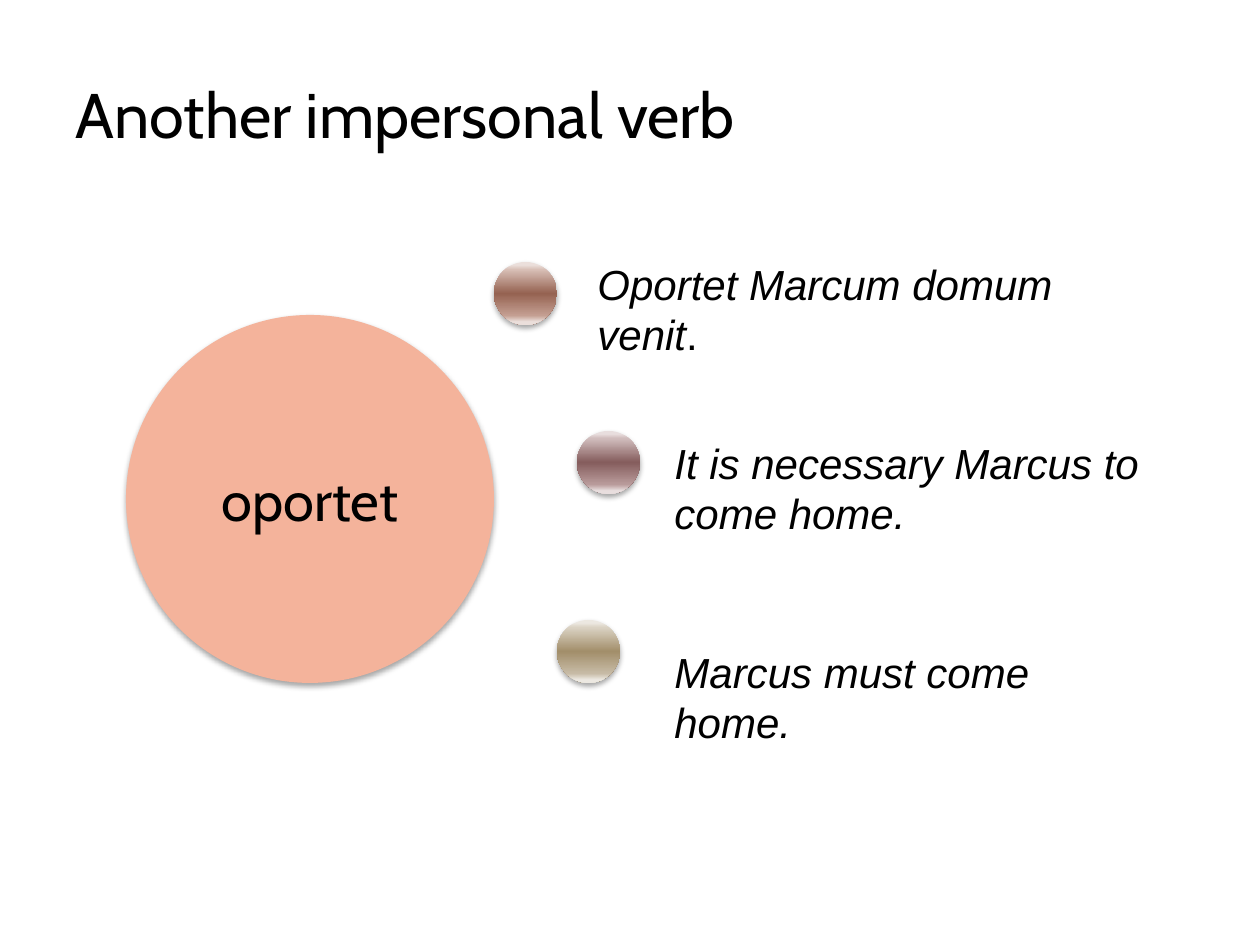
import lxml.etree
import pptx
import pptx.dml.color
import pptx.enum.shapes
import pptx.enum.text
import pptx.oxml.ns
import pptx.util

RGBColor = pptx.dml.color.RGBColor
BLACK = RGBColor(0x00, 0x00, 0x00)
PEACH = RGBColor(0xF4, 0xB3, 0x9B)

# Bead shades: edge, upper band, middle, lower band
RUST = (RGBColor(0xEB, 0xDF, 0xDB), RGBColor(0xD8, 0xBF, 0xB6),
        RGBColor(0x95, 0x62, 0x51), RGBColor(0xC4, 0x9F, 0x92))
MAUVE = (RGBColor(0xE8, 0xDE, 0xDE), RGBColor(0xD0, 0xBC, 0xBC),
         RGBColor(0x85, 0x5D, 0x5D), RGBColor(0xB9, 0x9B, 0x9B))
SAND = (RGBColor(0xEC, 0xE8, 0xE1), RGBColor(0xDA, 0xD2, 0xC3),
        RGBColor(0xA2, 0x8E, 0x6A), RGBColor(0xC7, 0xBB, 0xA6))

PX_PER_INCH = 126
BEAD_SIZE = 63
STOP_PERCENTS = (5, 12, 50, 85, 95)


def add_xml(parent, tag, **attributes):
    return lxml.etree.SubElement(parent, pptx.oxml.ns.qn(tag), attributes)


class SlideBuilder:
    heading_font = "Cabin"
    body_font = "Arial"

    def __init__(self, slide):
        self.slide = slide

    def emu(self, *lengths):
        return [pptx.util.Emu(round(n * 914400 / PX_PER_INCH)) for n in lengths]

    def style(self, para, name, size, italic=None):
        para.font.name = name
        para.font.size = pptx.util.Pt(size)
        para.font.color.rgb = BLACK
        para.font.italic = italic

    def title(self, text, *bounds):
        title = self.slide.shapes.title
        title.left, title.top, title.width, title.height = self.emu(*bounds)
        frame = title.text_frame
        frame.text = text
        frame.auto_size = pptx.enum.text.MSO_AUTO_SIZE.NONE
        frame.vertical_anchor = pptx.enum.text.MSO_ANCHOR.BOTTOM
        para = frame.paragraphs[0]
        para.alignment = pptx.enum.text.PP_ALIGN.LEFT
        self.style(para, self.heading_font, 36)

    def circle(self, left, top, size):
        circle = self.slide.shapes.add_shape(
            pptx.enum.shapes.MSO_SHAPE.OVAL, *self.emu(left, top, size, size))
        circle.line.fill.background()
        # Soft shadow straight below
        circle.shadow.inherit = False
        effects = circle.element.spPr.find(pptx.oxml.ns.qn("a:effectLst"))
        shadow = add_xml(effects, "a:outerShdw", blurRad="39370", dist="22860",
                         dir="5400000", rotWithShape="0")
        color = add_xml(shadow, "a:srgbClr", val=str(BLACK))
        add_xml(color, "a:alpha", val="35000")
        return circle

    def labelled_circle(self, text, left, top, size, color):
        circle = self.circle(left, top, size)
        circle.fill.solid()
        circle.fill.fore_color.rgb = color
        frame = circle.text_frame
        frame.text = text
        frame.vertical_anchor = pptx.enum.text.MSO_ANCHOR.MIDDLE
        para = frame.paragraphs[0]
        para.alignment = pptx.enum.text.PP_ALIGN.CENTER
        self.style(para, self.heading_font, 32)

    def bead(self, left, top, shades):
        bead = self.circle(left, top, BEAD_SIZE)
        bead.fill.gradient()
        bead.fill.gradient_angle = 270
        stops = next(bead.element.spPr.iter(pptx.oxml.ns.qn("a:gsLst")))
        for stop in list(stops):
            stops.remove(stop)
        for percent, shade in zip(STOP_PERCENTS, shades + shades[:1]):
            stop = add_xml(stops, "a:gs", pos=str(percent * 1000))
            add_xml(stop, "a:srgbClr", val=str(shade))

    def sentence(self, text, ending, left, top, width):
        box = self.slide.shapes.add_textbox(*self.emu(left, top, width, 115))
        frame = box.text_frame
        frame.word_wrap = True
        frame.auto_size = pptx.enum.text.MSO_AUTO_SIZE.SHAPE_TO_FIT_TEXT
        para = frame.paragraphs[0]
        self.style(para, self.body_font, 24, italic=True)
        para.add_run().text = text
        if ending:
            span = para.add_run()
            span.text = ending
            span.font.italic = False


def main():
    deck = pptx.Presentation()
    deck.slide_width = pptx.util.Inches(10)
    deck.slide_height = pptx.util.Inches(7.5)
    page = SlideBuilder(deck.slides.add_slide(deck.slide_layouts[5]))

    # Title and the verb
    page.title("Another impersonal verb", 63, 10, 935, 147)
    page.labelled_circle("oportet", 126, 315, 368, PEACH)

    # Beads around the circle, each with its sentence
    rows = [
        (RUST, (494, 262), "Oportet Marcum domum venit", ".", (585, 252, 561)),
        (MAUVE, (577, 431), "It is necessary Marcus to come home.", "",
         (662, 431, 498)),
        (SAND, (557, 620), "Marcus must come home.", "", (662, 640, 498)),
    ]
    for shades, bead_at, text, ending, text_at in rows:
        page.bead(*bead_at, shades)
        page.sentence(text, ending, *text_at)

    deck.save("out.pptx")


if __name__ == "__main__":
    main()
